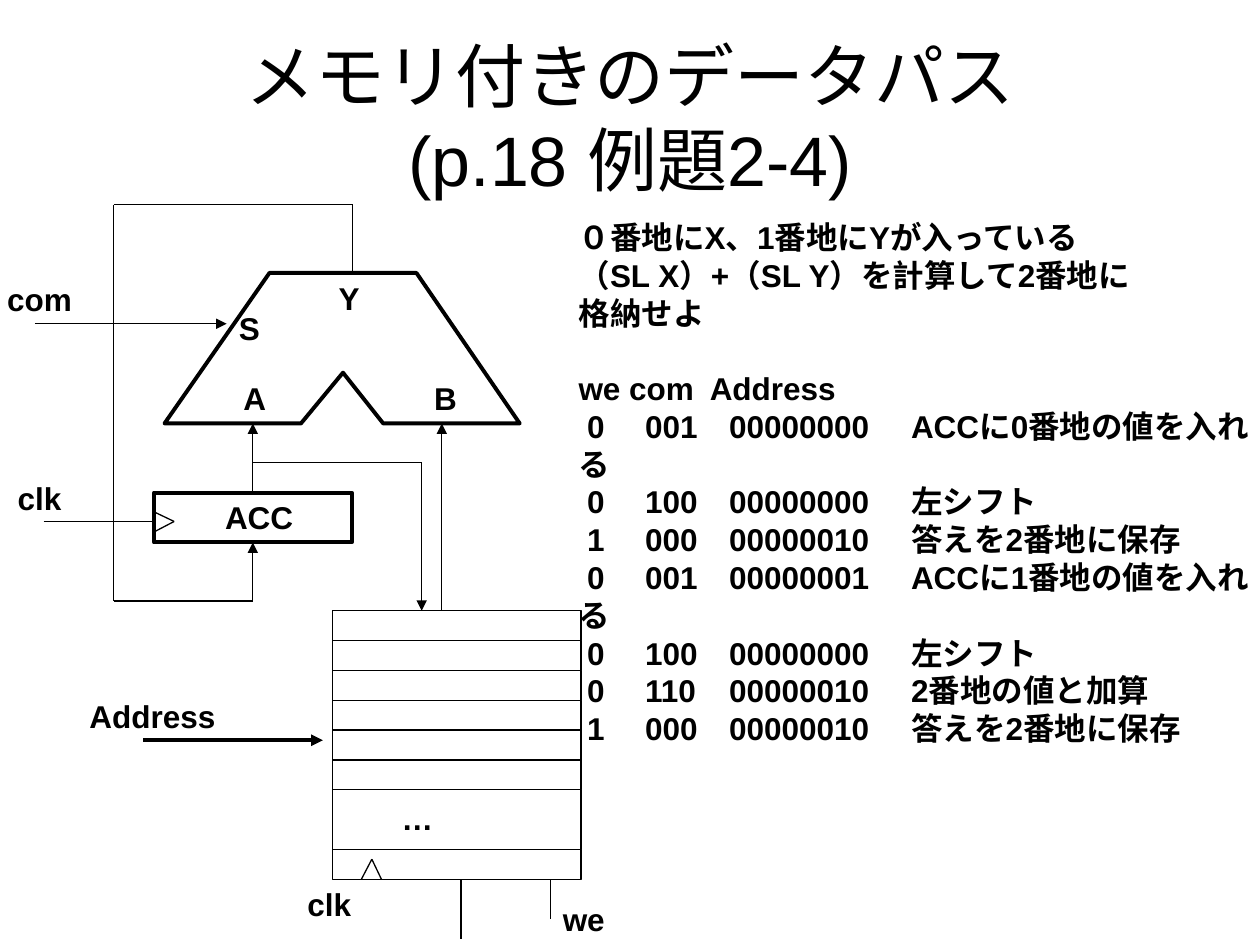
from lxml import etree
from pptx import Presentation
from pptx.dml.color import RGBColor
from pptx.enum.shapes import MSO_CONNECTOR, MSO_SHAPE
from pptx.enum.text import MSO_ANCHOR, PP_ALIGN
from pptx.oxml.ns import qn
from pptx.util import Pt

STRAIGHT = MSO_CONNECTOR.STRAIGHT
RECTANGLE = MSO_SHAPE.RECTANGLE
MIDDLE = MSO_ANCHOR.MIDDLE
CENTER = PP_ALIGN.CENTER

COLORS = {"ink": "000000"}
FONT = "Arial"
THIN, THICK = 0.75, 2.25

TASK = [
    "０番地にX、1番地にYが入っている",
    "（SL X）+（SL Y）を計算して2番地に",
    "格納せよ",
]
HEADER = "we com\tAddress"
PROGRAM = [
    ("0", "001", "00000000", "ACCに0番地の値を入れる"),
    ("0", "100", "00000000", "左シフト"),
    ("1", "000", "00000010", "答えを2番地に保存"),
    ("0", "001", "00000001", "ACCに1番地の値を入れる"),
    ("0", "100", "00000000", "左シフト"),
    ("0", "110", "00000010", "2番地の値と加算"),
    ("1", "000", "00000010", "答えを2番地に保存"),
]
HEADER_STOPS = (75,)
PROGRAM_STOPS = (38, 86, 190)

# text, left, top, width
LABELS = [
    ("A", 132, 213, 30),
    ("B", 241, 213, 30),
    ("Y", 186.5, 156, 30),
    ("S", 129.5, 173, 30),
    ("ACC", 121.5, 281, 62),
    ("…", 222.5, 453, 36),
    ("we", 314.5, 511, 46),
    ("Address", 44, 394.5, 98),
    ("clk", 168.5, 502, 46),
    ("clk", 3, 270, 46),
    ("com", -3, 156.5, 60),
]

# corner points, line width, arrow at the end
WIRES = [
    ([(144.5, 281.5), (144.5, 242)], THIN, True),
    ([(252.5, 349), (252.5, 242)], THIN, True),
    ([(20, 185), (129.5, 185)], THIN, True),
    ([(201.5, 156), (201.5, 117), (65, 117), (65, 343.5),
      (144.5, 343.5), (144.5, 310)], THIN, True),
    ([(88, 292.5), (99.5, 298), (88, 304)], THIN, False),
    ([(25, 298), (88, 298)], THIN, False),
    ([(82, 423), (184.5, 423)], THICK, True),
    ([(144.5, 264.5), (241, 264.5), (241, 349)], THIN, True),
    ([(314.5, 525), (314.5, 502.5)], THIN, False),
    ([(263.5, 536.5), (263.5, 502.5)], THIN, False),
    ([(206.5, 502.5), (212.5, 491), (218, 502.5)], THIN, False),
]

ALU_OUTLINE = [(94, 242), (172, 242), (196, 213), (219, 242),
               (297, 242), (238, 156), (154, 156)]

MEMORY_LEFT, MEMORY_TOP, MEMORY_WIDTH, ROW_HEIGHT = 190, 349, 142, 17.05
ROW_SPANS = (1, 1, 1, 1, 1, 1, 2, 1)


def ink():
    return RGBColor.from_string(COLORS["ink"])


def style_text(frame, size, bold):
    for paragraph in frame.paragraphs:
        for span in paragraph.runs:
            span.font.name = FONT
            span.font.size = Pt(size)
            span.font.bold = bold
            span.font.color.rgb = ink()


def add_text(page, text, left, top, width, height, size=18, bold=True, wrap=False):
    box = page.shapes.add_textbox(Pt(left), Pt(top), Pt(width), Pt(height))
    frame = box.text_frame
    frame.word_wrap = wrap
    frame.text = text
    style_text(frame, size, bold)
    return frame


def outline(shape, weight):
    shape.shadow.inherit = False
    shape.fill.background()
    shape.line.color.rgb = ink()
    shape.line.width = Pt(weight)


def add_box(page, left, top, width, height, weight):
    box = page.shapes.add_shape(RECTANGLE, Pt(left), Pt(top), Pt(width), Pt(height))
    outline(box, weight)


def add_wire(page, points, weight, arrow):
    """Join the points by straight connectors, with an arrowhead on the last."""
    for start, end in zip(points, points[1:]):
        wire = page.shapes.add_connector(
            STRAIGHT, *(Pt(value) for value in start + end))
        wire.line.color.rgb = ink()
        wire.line.width = Pt(weight)
        properties = wire._element.spPr
        if arrow and end == points[-1]:
            etree.SubElement(properties.find(qn("a:ln")), qn("a:tailEnd"), type="triangle")
        etree.SubElement(properties, qn("a:effectLst"))


def add_alu(page):
    builder = page.shapes.build_freeform(*ALU_OUTLINE[0], scale=Pt(1))
    builder.add_line_segments(ALU_OUTLINE[1:], close=True)
    outline(builder.convert_to_shape(), THICK)


def add_memory(page):
    top = MEMORY_TOP
    for span in ROW_SPANS:
        add_box(page, MEMORY_LEFT, top, MEMORY_WIDTH, span * ROW_HEIGHT, THIN)
        top += span * ROW_HEIGHT


def set_tab_stops(paragraph, stops):
    tab_list = etree.SubElement(paragraph._p.get_or_add_pPr(), qn("a:tabLst"))
    for stop in stops:
        etree.SubElement(tab_list, qn("a:tab"), pos=str(Pt(stop)), algn="l")


def add_program(page):
    lines = TASK + [HEADER] + [" " + "\t".join(row) for row in PROGRAM]
    frame = add_text(page, "\n".join(lines), 323.5, 121, 400, 269, wrap=True)
    header, *rows = frame.paragraphs[len(TASK):]
    header.space_before = Pt(21.5)
    set_tab_stops(header, HEADER_STOPS)
    for row in rows:
        set_tab_stops(row, PROGRAM_STOPS)


def add_title(page):
    frame = add_text(page, "メモリ付きのデータパス\v(p.18 例題2-4)",
                     36, 21.6, 648, 90, size=40, bold=False, wrap=True)
    frame.vertical_anchor = MIDDLE
    frame.paragraphs[0].alignment = CENTER


def main():
    deck = Presentation()
    deck.slide_width, deck.slide_height = Pt(720), Pt(540)
    page = deck.slides.add_slide(deck.slide_layouts[6])
    add_title(page)
    add_alu(page)
    add_box(page, 88, 281.5, 113, 28.5, THICK)
    add_memory(page)
    for points, weight, arrow in WIRES:
        add_wire(page, points, weight, arrow)
    for text, left, top, width in LABELS:
        add_text(page, text, left, top, width, 29)
    add_program(page)
    deck.save("out.pptx")


if __name__ == "__main__":
    main()
